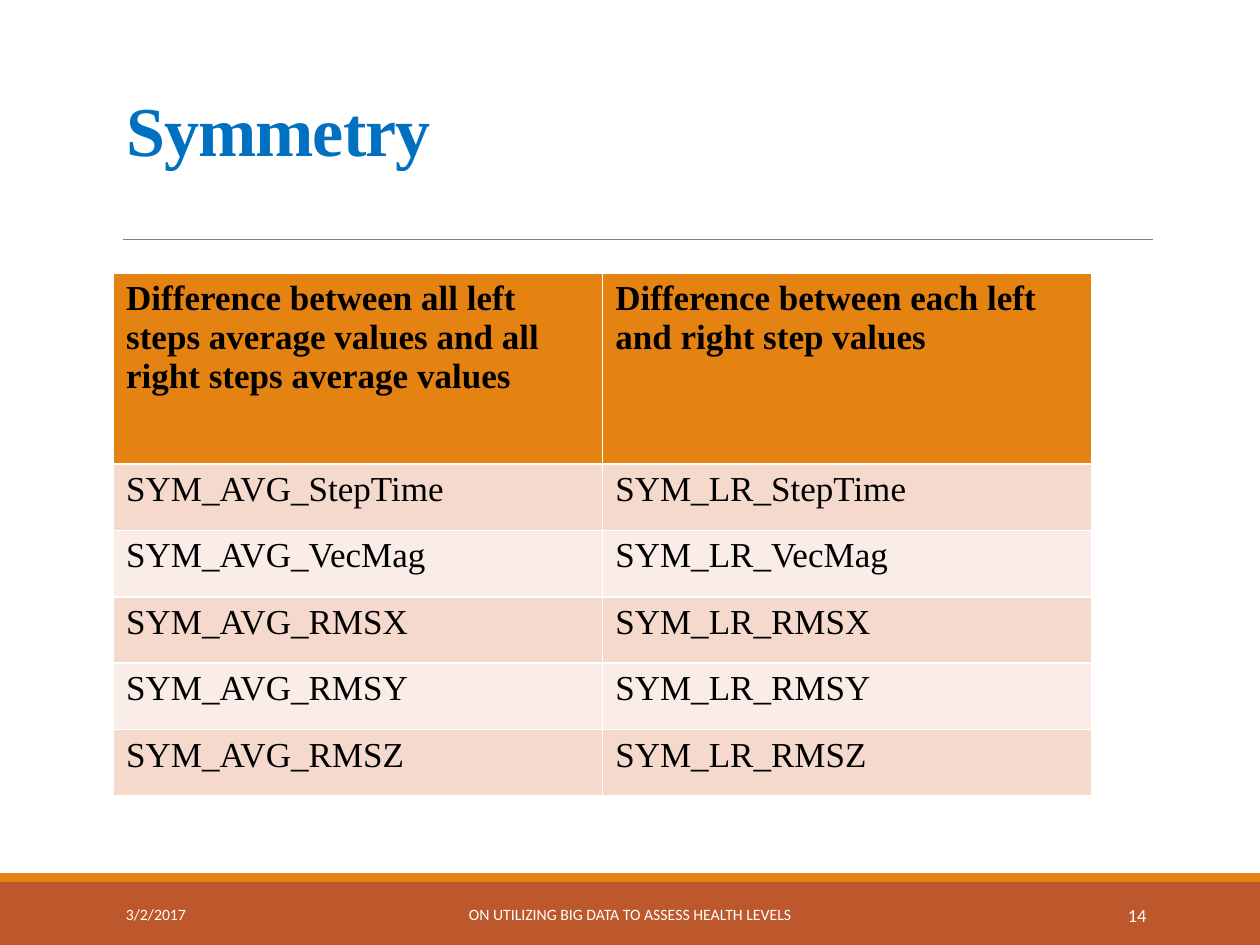
from pptx import Presentation
from pptx.dml.color import RGBColor
from pptx.enum.shapes import MSO_CONNECTOR as Connector, MSO_SHAPE as Shape
from pptx.enum.text import MSO_ANCHOR as Anchor, MSO_AUTO_SIZE as AutoSize, PP_ALIGN as Align
from pptx.oxml.ns import qn
from pptx.util import Cm, Pt
from lxml.etree import SubElement

WHITE = RGBColor(0xFF, 0xFF, 0xFF)
BLACK = RGBColor(0x00, 0x00, 0x00)
GRAY = RGBColor(0x80, 0x80, 0x80)
BLUE = RGBColor(0x00, 0x70, 0xC0)
RUST = RGBColor(0xBD, 0x58, 0x2C)
ORANGE = RGBColor(0xE4, 0x83, 0x12)
BAND_DARK = RGBColor(0xF5, 0xD9, 0xCC)
BAND_LIGHT = RGBColor(0xFA, 0xED, 0xE7)
SERIF = "Times New Roman"


def format_font(font, color, **values):
    font.color.rgb = color
    for name, value in values.items():
        setattr(font, name, value)


prs = Presentation()
prs.slide_width, prs.slide_height = Cm(25.4), Cm(19.05)
slide = prs.slides.add_slide(prs.slide_layouts[5])
shapes = slide.shapes

# Footer bands and the rule under the title
for top, height, color in [(17.78, 1.27, RUST), (17.6, 0.18, ORANGE)]:
    band = shapes.add_shape(Shape.RECTANGLE, 0, Cm(top), prs.slide_width, Cm(height))
    band.shadow.inherit = False
    band.fill.solid()
    band.fill.fore_color.rgb = color
    band.line.fill.background()

rule = shapes.add_connector(Connector.STRAIGHT, Cm(2.48), Cm(4.83), Cm(23.24), Cm(4.83))
rule.line.color.rgb = GRAY
rule.line.width = Pt(0.5)
SubElement(rule._element.spPr, qn("a:effectLst"))

# Title
title = shapes.title
title_place = {"left": Cm(2.29), "top": Cm(0.79), "width": Cm(20.96), "height": Cm(2.79)}
for name, value in title_place.items():
    setattr(title, name, value)
title.text_frame.auto_size = AutoSize.NONE
title.text_frame.vertical_anchor = Anchor.BOTTOM
heading = title.text_frame.paragraphs[0]
heading.alignment = Align.LEFT
heading.line_spacing = 0.85
heading_run = heading.add_run()
heading_run.text = "Symmetry"
format_font(heading_run.font, BLUE, name=SERIF, size=Pt(40), bold=True)
heading_run._r.get_or_add_rPr().set("spc", "-50")

# Date, footer and slide number
footer_items = [
    ("3/2/2017", 2.29, 5.16, Align.LEFT, 9),
    ("ON UTILIZING BIG DATA TO ASSESS HEALTH LEVELS", 7.67, 10.06, Align.CENTER, 9),
    ("14", 20.62, 2.74, Align.RIGHT, 10.5),
]
for text, left, width, alignment, size in footer_items:
    frame = shapes.add_textbox(Cm(left), Cm(17.93), Cm(width), Cm(1.02)).text_frame
    frame.word_wrap = True
    frame.vertical_anchor = Anchor.MIDDLE
    paragraph = frame.paragraphs[0]
    paragraph.text = text
    paragraph.alignment = alignment
    format_font(paragraph.runs[0].font, WHITE, name="Calibri", size=Pt(size))

# Symmetry features
headers = [
    "Difference between all left steps average values and all right steps average values",
    "Difference between each left and right step values",
]
measures = ["StepTime", "VecMag", "RMSX", "RMSY", "RMSZ"]
rows = [headers] + [[f"SYM_{kind}_{measure}" for kind in ("AVG", "LR")] for measure in measures]
features = shapes.add_table(len(rows), 2, Cm(2.29), Cm(5.51), Cm(19.72), Cm(10.54)).table
for r, row in enumerate(rows):
    features.rows[r].height = Cm(1.34 if r else 3.84)
    row_color = (BAND_DARK if r % 2 else BAND_LIGHT) if r else ORANGE
    for c, text in enumerate(row):
        cell = features.cell(r, c)
        cell.text = text
        cell.fill.solid()
        cell.fill.fore_color.rgb = row_color
        run = cell.text_frame.paragraphs[0].runs[0]
        format_font(run.font, BLACK, name=SERIF, size=Pt(20), bold=r == 0)

prs.save("out.pptx")
